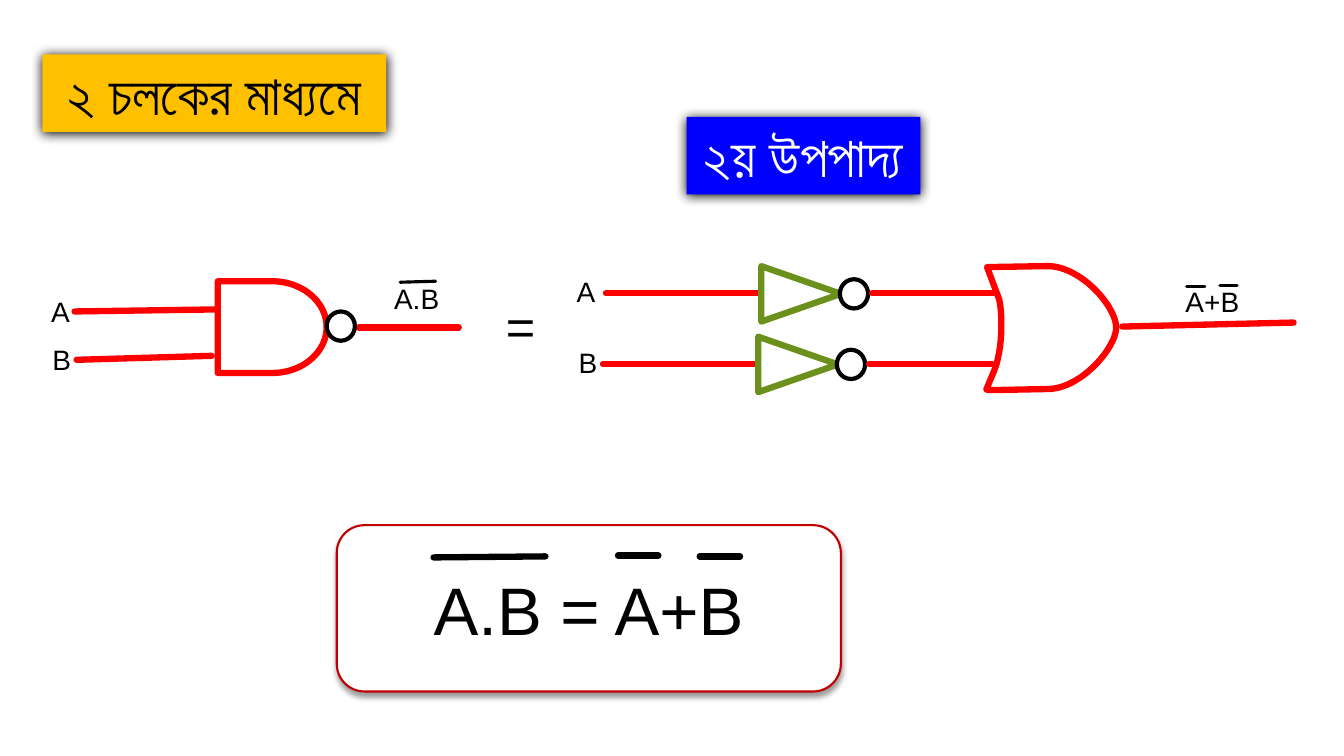
from lxml import etree
from pptx import Presentation
from pptx.dml.color import RGBColor
from pptx.enum.shapes import MSO_CONNECTOR, MSO_SHAPE as Preset
from pptx.enum.text import MSO_ANCHOR as Anchor, MSO_AUTO_SIZE as AutoSize, PP_ALIGN as Align
from pptx.oxml.ns import qn
from pptx.util import Inches, Pt

BLACK = RGBColor(0x00, 0x00, 0x00)
WHITE = RGBColor(0xFF, 0xFF, 0xFF)
RED = RGBColor(0xFF, 0x00, 0x00)
DARK_RED = RGBColor(0xC0, 0x00, 0x00)
GREEN = RGBColor(0x6B, 0x90, 0x1C)
AMBER = RGBColor(0xFF, 0xC0, 0x00)
BLUE = RGBColor(0x00, 0x00, 0xFF)


def write(shape, text, size, font="Arial", color=BLACK, align=Align.LEFT,
          anchor=Anchor.TOP, wrap=True):
    frame = shape.text_frame
    frame.word_wrap = wrap
    frame.vertical_anchor = anchor
    para = frame.paragraphs[0]
    para.alignment = align
    span = para.add_run()
    span.text = text
    span.font.size = Pt(size)
    span.font.name = font
    span.font.color.rgb = color
    complex_font = etree.SubElement(span.font._element, qn("a:cs"))
    complex_font.set("typeface", font)
    return frame


def paint(shape, fill=None, line=None, weight=4.5):
    shape.shadow.inherit = False
    if fill is None:
        shape.fill.background()
    else:
        shape.fill.solid()
        shape.fill.fore_color.rgb = fill
    if line is None:
        shape.line.fill.background()
    else:
        shape.line.color.rgb = line
        shape.line.width = Pt(weight)


def add_preset(page, preset, left, top, width, height, **colors):
    shape = page.shapes.add_shape(
        preset, Inches(left), Inches(top), Inches(width), Inches(height))
    paint(shape, **colors)
    return shape


def drop_shadow(shape, alpha, blur, distance):
    """Cast a black shadow straight down; alpha in percent, lengths in points."""
    effects = shape._element.spPr.find(qn("a:effectLst"))
    shadow = etree.SubElement(
        effects, qn("a:outerShdw"), blurRad=str(Pt(blur)), dist=str(Pt(distance)),
        dir="5400000", rotWithShape="0")
    color = etree.SubElement(shadow, qn("a:srgbClr"), val=str(BLACK))
    etree.SubElement(color, qn("a:alpha"), val=str(alpha * 1000))


def add_line(page, x1, y1, x2, y2, color=RED, weight=4.5):
    line = page.shapes.add_connector(
        MSO_CONNECTOR.STRAIGHT, Inches(x1), Inches(y1), Inches(x2), Inches(y2))
    line.line.color.rgb = color
    line.line.width = Pt(weight)
    line.line._get_or_add_ln().set("cap", "rnd")
    etree.SubElement(line._element.spPr, qn("a:effectLst"))


def add_label(page, text, left, top, width, height=0.44, size=20):
    box = page.shapes.add_textbox(
        Inches(left), Inches(top), Inches(width), Inches(height))
    write(box, text, size, wrap=False).auto_size = AutoSize.SHAPE_TO_FIT_TEXT


def add_banner(page, text, left, top, width, fill, color):
    banner = add_preset(page, Preset.RECTANGLE, left, top, width, 0.77, fill=fill)
    drop_shadow(banner, 100, 8.5, 1)
    frame = write(banner, text, 40, "Roboto", color, Align.CENTER)
    frame.auto_size = AutoSize.SHAPE_TO_FIT_TEXT


def add_bubble(page, left, top):
    add_preset(page, Preset.OVAL, left, top, 0.28, 0.29,
               fill=WHITE, line=BLACK, weight=3)


def add_inverter(page, left, middle):
    """Draw an input wire, a NOT gate and its output wire along one row."""
    add_line(page, left, middle, left + 1.51, middle)
    triangle = add_preset(page, Preset.FLOWCHART_MERGE, left + 1.66, middle - 0.39,
                          0.55, 0.79, line=GREEN)
    triangle.rotation = 270
    add_bubble(page, left + 2.32, middle - 0.14)
    add_line(page, left + 2.64, middle, left + 3.86, middle)


def curve(start, pull1, pull2, end, steps=24):
    """Points along a cubic Bezier curve, without its start."""
    points = []
    for step in range(1, steps + 1):
        t = step / steps
        weights = ((1 - t) ** 3, 3 * t * (1 - t) ** 2, 3 * t * t * (1 - t), t ** 3)
        corners = (start, pull1, pull2, end)
        points.append(tuple(
            Inches(sum(w * corner[axis] for w, corner in zip(weights, corners)))
            for axis in (0, 1)))
    return points


def add_or_gate(page):
    top_left, shoulder, tip = (9.79, 2.65), (10.39, 2.64), (11.07, 3.25)
    low_shoulder, bottom_left = (10.39, 3.86), (9.79, 3.85)
    back_low, back_top = (9.9, 3.54), (9.91, 2.97)
    outline = page.shapes.build_freeform(*map(Inches, top_left))
    outline.add_line_segments(
        [tuple(map(Inches, shoulder))]
        + curve(shoulder, (10.72, 2.64), (11.07, 3.04), tip)
        + curve(tip, (11.07, 3.45), (10.72, 3.86), low_shoulder)
        + [(Inches(9.85), Inches(3.87))]
        + curve((9.85, 3.87), (9.8, 3.87), (9.77, 3.87), bottom_left)
        + curve(bottom_left, (9.82, 3.76), (9.88, 3.66), back_low)
        + curve(back_low, (9.94, 3.38), (9.94, 3.1), back_top),
        close=True)
    paint(outline.convert_to_shape(), line=RED)


def add_formula(page):
    panel = add_preset(page, Preset.FLOWCHART_ALTERNATE_PROCESS, 3.34, 5.21, 5, 1.65,
                       fill=WHITE, line=DARK_RED, weight=1.5)
    drop_shadow(panel, 40, 4, 3)
    write(panel, "A.B = A+B", 48, align=Align.CENTER, anchor=Anchor.MIDDLE)
    for x1, y1, x2, y2 in ((4.3, 5.53, 5.41, 5.52), (6.13, 5.51, 6.53, 5.51),
                           (6.94, 5.52, 7.34, 5.52)):
        add_line(page, x1, y1, x2, y2, BLACK)


def add_nand_circuit(page):
    add_line(page, 0.76, 3.57, 2.1, 3.53)
    add_line(page, 0.74, 3.09, 2.14, 3.07)
    add_preset(page, Preset.FLOWCHART_DELAY, 2.16, 2.79, 1.08, 0.91, line=RED)
    add_line(page, 3.56, 3.25, 4.55, 3.25)
    add_bubble(page, 3.24, 3.09)
    add_label(page, "A", 0.41, 2.87, 0.39)
    add_label(page, "B", 0.42, 3.35, 0.39)
    add_label(page, "A.B", 3.81, 2.74, 0.65)
    add_line(page, 3.97, 2.8, 4.32, 2.79, BLACK, 2.25)


def add_or_circuit(page):
    add_inverter(page, 6.01, 2.91)
    add_inverter(page, 5.98, 3.61)
    add_or_gate(page)
    add_line(page, 11.13, 3.24, 12.83, 3.2)
    add_label(page, "A", 5.62, 2.67, 0.39)
    add_label(page, "B", 5.64, 3.38, 0.39)
    add_label(page, "A+B", 11.66, 2.77, 0.74)
    add_line(page, 11.77, 2.84, 11.95, 2.84, BLACK, 2.25)
    add_line(page, 12.1, 2.83, 12.27, 2.83, BLACK, 2.25)


def main():
    deck = Presentation()
    deck.slide_width, deck.slide_height = Inches(13.33), Inches(7.5)
    page = deck.slides.add_slide(deck.slide_layouts[6])
    add_formula(page)
    add_banner(page, "২ চলকের মাধ্যমে", 0.42, 0.54, 3.41, AMBER, BLACK)
    add_nand_circuit(page)
    add_or_circuit(page)
    add_label(page, "=", 4.92, 2.88, 0.5, 0.71, size=36)
    add_banner(page, "২য় উপপাদ্য", 6.81, 1.16, 2.32, BLUE, WHITE)
    deck.save("out.pptx")


if __name__ == "__main__":
    main()
